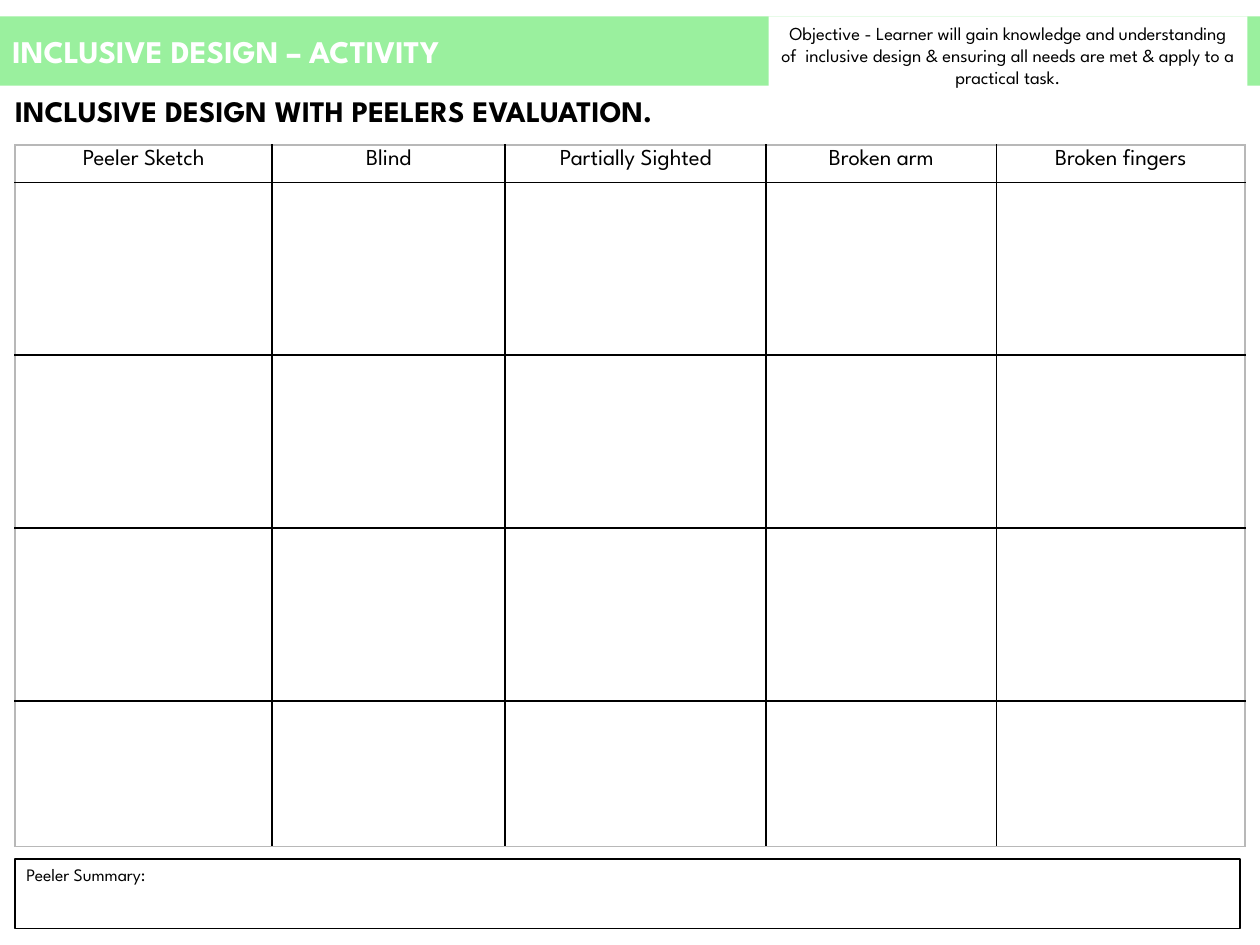
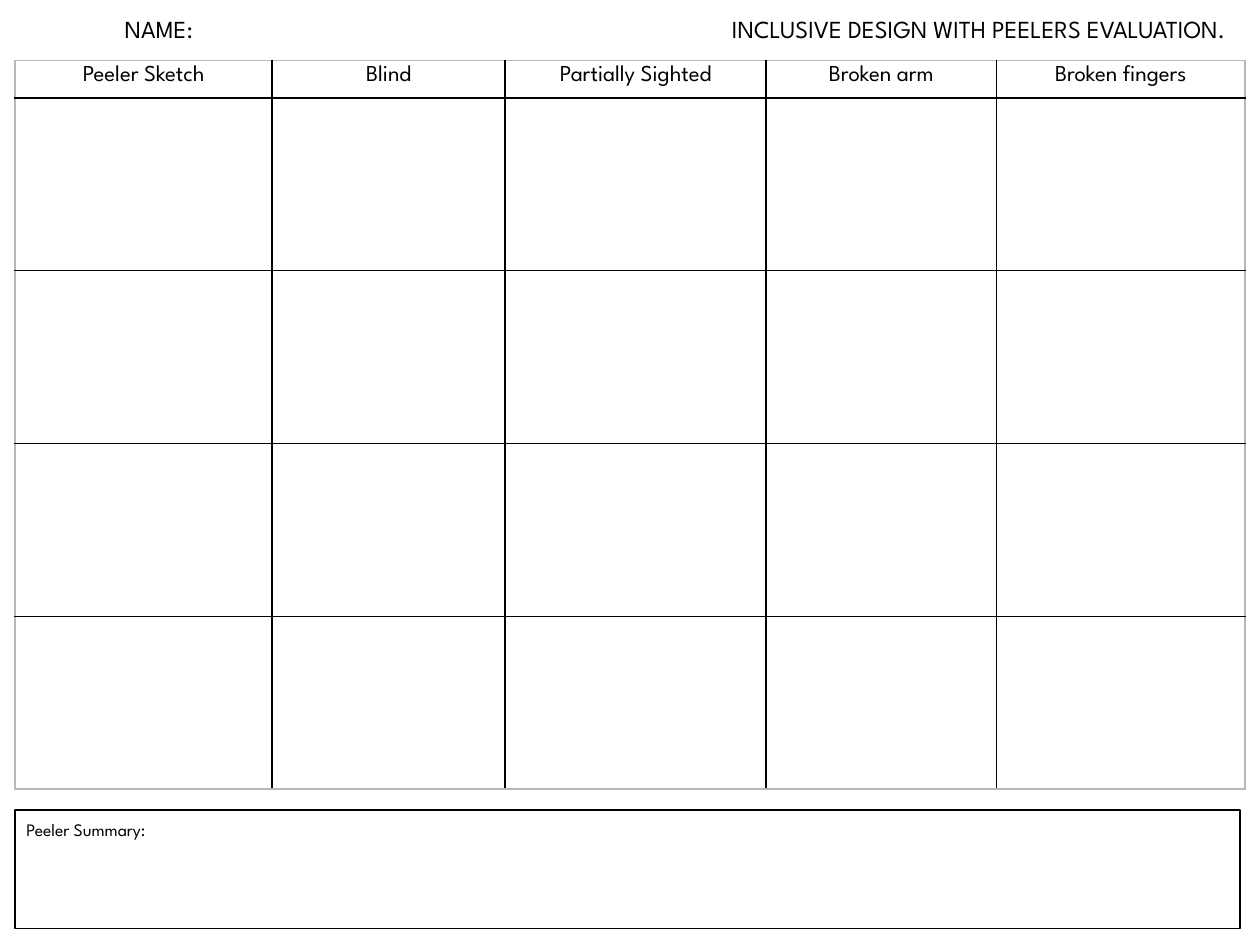
from lxml import etree
from pptx import Presentation
from pptx.dml.color import RGBColor
from pptx.enum.shapes import MSO_SHAPE
from pptx.enum.text import MSO_ANCHOR, PP_ALIGN
from pptx.oxml.ns import qn
from pptx.util import Inches, Pt

RECTANGLE = MSO_SHAPE.RECTANGLE
TOP, MIDDLE = MSO_ANCHOR.TOP, MSO_ANCHOR.MIDDLE
LEFT, CENTER, RIGHT = PP_ALIGN.LEFT, PP_ALIGN.CENTER, PP_ALIGN.RIGHT

COLORS = {"band": "9AF09E", "paper": "FFFFFF", "ink": "000000", "frame": "B8B8B8"}
FONT = "League Spartan"
HEADING = "INCLUSIVE DESIGN WITH PEELERS EVALUATION."

# The slide is a grid of 100 columns by 75 rows, each a tenth of an inch
COLUMNS, ROWS = 100, 75
CELL = Inches(0.1)
MARGIN = 1.2
SUMMARY_WIDTH = 97.2
SUMMARY_BOTTOM = 73.7

NEEDS = {
    "Peeler Sketch": 20.4,
    "Blind": 18.5,
    "Partially Sighted": 20.7,
    "Broken arm": 18.3,
    "Broken fingers": 19.7,
}
HEADER_HEIGHT = 2.9
SKETCH_HEIGHT = 13.72


def grid(*lengths):
    return [round(length * CELL) for length in lengths]


class Worksheet:
    def __init__(self, deck):
        self.deck = deck
        self.page = None

    def new_page(self):
        self.page = self.deck.slides.add_slide(self.deck.slide_layouts[6])

    def style(self, para, size, color="ink", align=LEFT, bold=False):
        para.alignment = align
        para.font.name = FONT
        para.font.size = Pt(size)
        para.font.bold = bold
        para.font.color.rgb = RGBColor.from_string(COLORS[color])

    def fill_text(self, box, text, size, insets=(1, 0.5), anchor=TOP, **style):
        frame = box.text_frame
        frame.word_wrap = True
        frame.vertical_anchor = anchor
        side, end = grid(*insets)
        frame.margin_left = frame.margin_right = side
        frame.margin_top = frame.margin_bottom = end
        frame.text = text
        self.style(frame.paragraphs[0], size, **style)

    def panel(self, place, fill, text, size, outlined=False, **style):
        box = self.page.shapes.add_shape(RECTANGLE, *grid(*place))
        box.shadow.inherit = False
        box.fill.solid()
        box.fill.fore_color.rgb = RGBColor.from_string(COLORS[fill])
        if outlined:
            box.line.color.rgb = RGBColor.from_string(COLORS["ink"])
            box.line.width = Pt(1)
        else:
            box.line.fill.background()
        self.fill_text(box, text, size, **style)

    def label(self, place, text, size, **style):
        box = self.page.shapes.add_textbox(*grid(*place))
        self.fill_text(box, text, size, insets=(1.2, 0.6), **style)

    def borders(self, cell, edges):
        properties = cell._tc.get_or_add_tcPr()
        for index, (side, color) in enumerate(edges.items()):
            line = etree.Element(qn(f"a:ln{side}"), w=str(Pt(1)))
            fill = etree.SubElement(line, qn("a:solidFill"))
            etree.SubElement(fill, qn("a:srgbClr"), val=COLORS[color])
            properties.insert(index, line)

    def evaluation_table(self, top, sketch_heights):
        heights = [HEADER_HEIGHT, *sketch_heights]
        place = grid(MARGIN, top, sum(NEEDS.values()), sum(heights))
        table = self.page.shapes.add_table(len(heights), len(NEEDS), *place).table
        table.first_row = table.horz_banding = False
        for column, width in zip(table.columns, grid(*NEEDS.values())):
            column.width = width
        for row, height in zip(table.rows, grid(*heights)):
            row.height = height

        last_row, last_column = len(heights) - 1, len(NEEDS) - 1
        for r, row in enumerate(table.rows):
            for c, cell in enumerate(row.cells):
                cell.fill.background()
                cell.margin_top, cell.margin_bottom = grid(0.4, 0.4)
                outer = {"L": c == 0, "R": c == last_column,
                         "T": r == 0, "B": r == last_row}
                self.borders(cell, {side: "frame" if is_outer else "ink"
                                    for side, is_outer in outer.items()})
        for cell, need in zip(table.rows[0].cells, NEEDS):
            cell.text = need
            self.style(cell.text_frame.paragraphs[0], 13, align=CENTER)

    def summary(self, top, inset):
        self.panel((MARGIN, top, SUMMARY_WIDTH, SUMMARY_BOTTOM - top), "paper",
                   "Peeler Summary:", 10, outlined=True, insets=(0.9, inset))


def activity_page(sheet):
    sheet.new_page()
    # Title band with the objective
    sheet.panel((0, 1.3, COLUMNS, 5.5), "band", "INCLUSIVE DESIGN – ACTIVITY", 18,
                anchor=MIDDLE, color="paper", bold=True)
    sheet.panel((61, 1.3, 38, 6.3), "paper",
                "Objective - Learner will gain knowledge and understanding of  inclusive "
                "design & ensuring all needs are met & apply to a practical task.",
                10.5, align=CENTER)
    sheet.label((0, 6.8, 99.6, 5.7), HEADING, 17, bold=True)
    # Evaluation, with a shorter last row
    sheet.evaluation_table(11.5, [SKETCH_HEIGHT] * 3 + [11.55])
    sheet.summary(68.2, 0.4)


def pupil_page(sheet):
    sheet.new_page()
    # Name and heading on one line
    sheet.label((8.7, 0.5, 20, 4.9), "NAME:", 14)
    sheet.label((48.5, 0.5, 50, 4.9), HEADING, 14, align=RIGHT)
    # Evaluation
    sheet.evaluation_table(4.8, [SKETCH_HEIGHT] * 4)
    sheet.summary(64.3, 0.7)


def main():
    deck = Presentation()
    deck.slide_width, deck.slide_height = COLUMNS * CELL, ROWS * CELL
    sheet = Worksheet(deck)
    activity_page(sheet)
    pupil_page(sheet)
    deck.save("out.pptx")


if __name__ == "__main__":
    main()
